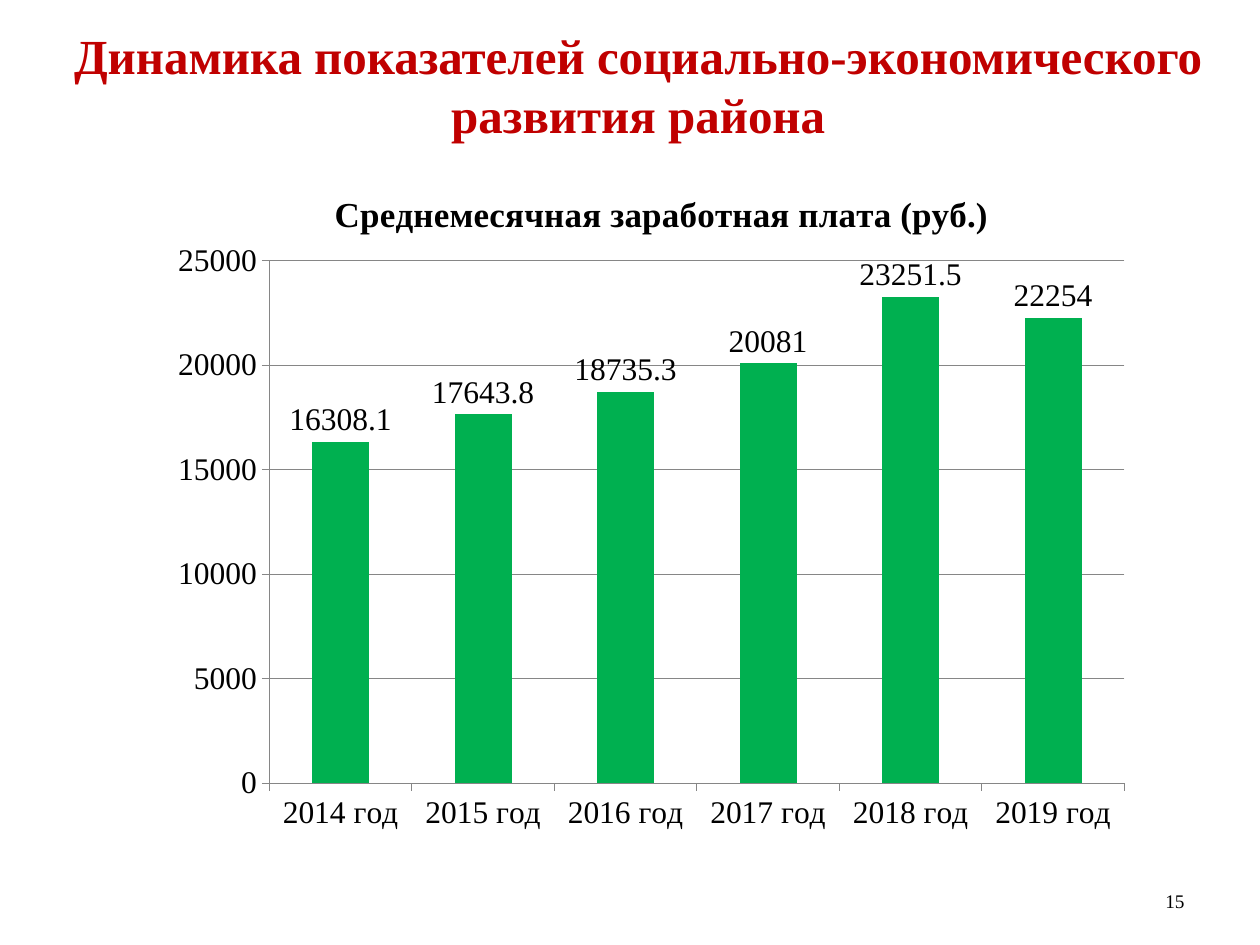
from lxml import etree
from pptx import Presentation
from pptx.chart.data import CategoryChartData
from pptx.dml.color import RGBColor
from pptx.enum import chart as ch, text
from pptx.oxml.ns import qn
from pptx.util import Inches, Pt

FONT = "Times New Roman"
RED = RGBColor(0xC0, 0x00, 0x00)
GREEN = RGBColor(0x00, 0xB0, 0x50)
GRAY = RGBColor(0x86, 0x86, 0x86)
BLACK = RGBColor(0, 0, 0)

WAGES = {2014: 16308.1, 2015: 17643.8, 2016: 18735.3,
         2017: 20081, 2018: 23251.5, 2019: 22254}


def style(font, size, color=BLACK, bold=False):
    font.name, font.size, font.bold = FONT, Pt(size), bold
    font.color.rgb = color


def set_layout(parent, index, **settings):
    """Give a chart part a manual layout, as fractions of the chart."""
    for old in parent.findall(qn("c:layout")):
        parent.remove(old)
    layout = etree.Element(qn("c:layout"))
    manual = etree.SubElement(layout, qn("c:manualLayout"))
    for tag, value in settings.items():
        etree.SubElement(manual, qn("c:" + tag)).set("val", str(value))
    parent.insert(index, layout)


def add_heading(slide, left, top, width, height):
    heading = slide.shapes.title
    heading.left, heading.top = left, top
    heading.width, heading.height = width, height
    frame = heading.text_frame
    frame.text = "Динамика показателей социально-экономического развития района"
    frame.auto_size = text.MSO_AUTO_SIZE.NONE
    frame.vertical_anchor = text.MSO_ANCHOR.TOP
    frame.paragraphs[0].alignment = text.PP_ALIGN.CENTER
    style(frame.paragraphs[0].runs[0].font, 28, RED, True)


def add_wage_chart(slide, left, top, width, height):
    data = CategoryChartData()
    data.categories = [f"{year} год" for year in WAGES]
    data.add_series("Series 1", WAGES.values())
    chart = slide.shapes.add_chart(ch.XL_CHART_TYPE.COLUMN_CLUSTERED,
                                   left, top, width, height, data).chart
    style(chart.font, 18)
    chart.has_legend = False

    chart.has_title = True
    caption = chart.chart_title.text_frame
    caption.text = "Среднемесячная заработная плата (руб.)"
    style(caption.paragraphs[0].runs[0].font, 20, bold=True)
    chart.chart_title.include_in_layout = False

    wages = chart.plots[0]
    wages.gap_width = 150
    wages.vary_by_categories = False
    fill = wages.series[0].format.fill
    fill.solid()
    fill.fore_color.rgb = GREEN
    wages.has_data_labels = True
    labels = wages.data_labels
    labels.show_value = True
    labels.position = ch.XL_LABEL_POSITION.OUTSIDE_END
    labels.number_format, labels.number_format_is_linked = "General", False
    style(labels.font, 18)

    for axis in (chart.category_axis, chart.value_axis):
        axis.major_tick_mark = ch.XL_TICK_MARK.OUTSIDE
        axis.format.line.color.rgb = GRAY
        style(axis.tick_labels.font, 18)
    amounts = chart.value_axis
    amounts.minimum_scale, amounts.maximum_scale = 0, 25000
    amounts.major_unit = 5000
    amounts.has_major_gridlines = True
    amounts.major_gridlines.format.line.color.rgb = GRAY

    plot_area = chart.element.find(".//" + qn("c:plotArea"))
    set_layout(plot_area, 0, layoutTarget="inner", xMode="edge", yMode="edge",
               x=0.11, y=0.15, w=0.87, h=0.76)
    set_layout(chart.element.find(".//" + qn("c:title")), 1,
               xMode="edge", yMode="edge", x=0.17, y=0.04)


def add_page_number(slide, left, top, width, height):
    frame = slide.shapes.add_textbox(left, top, width, height).text_frame
    frame.word_wrap = True
    frame.text = "15"
    frame.vertical_anchor = text.MSO_ANCHOR.MIDDLE
    frame.paragraphs[0].alignment = text.PP_ALIGN.RIGHT
    style(frame.paragraphs[0].runs[0].font, 11)


def main():
    deck = Presentation()
    deck.slide_width, deck.slide_height = Inches(10), Inches(7.5)
    slide = deck.slides.add_slide(deck.slide_layouts[5])
    add_wage_chart(slide, Inches(1.28), Inches(1.25), Inches(7.8), Inches(5.46))
    add_page_number(slide, Inches(7.17), Inches(6.95), Inches(2.33), Inches(0.4))
    add_heading(slide, Inches(0.2), Inches(0.15), Inches(9.73), Inches(1.04))
    deck.save("out.pptx")


if __name__ == "__main__":
    main()
